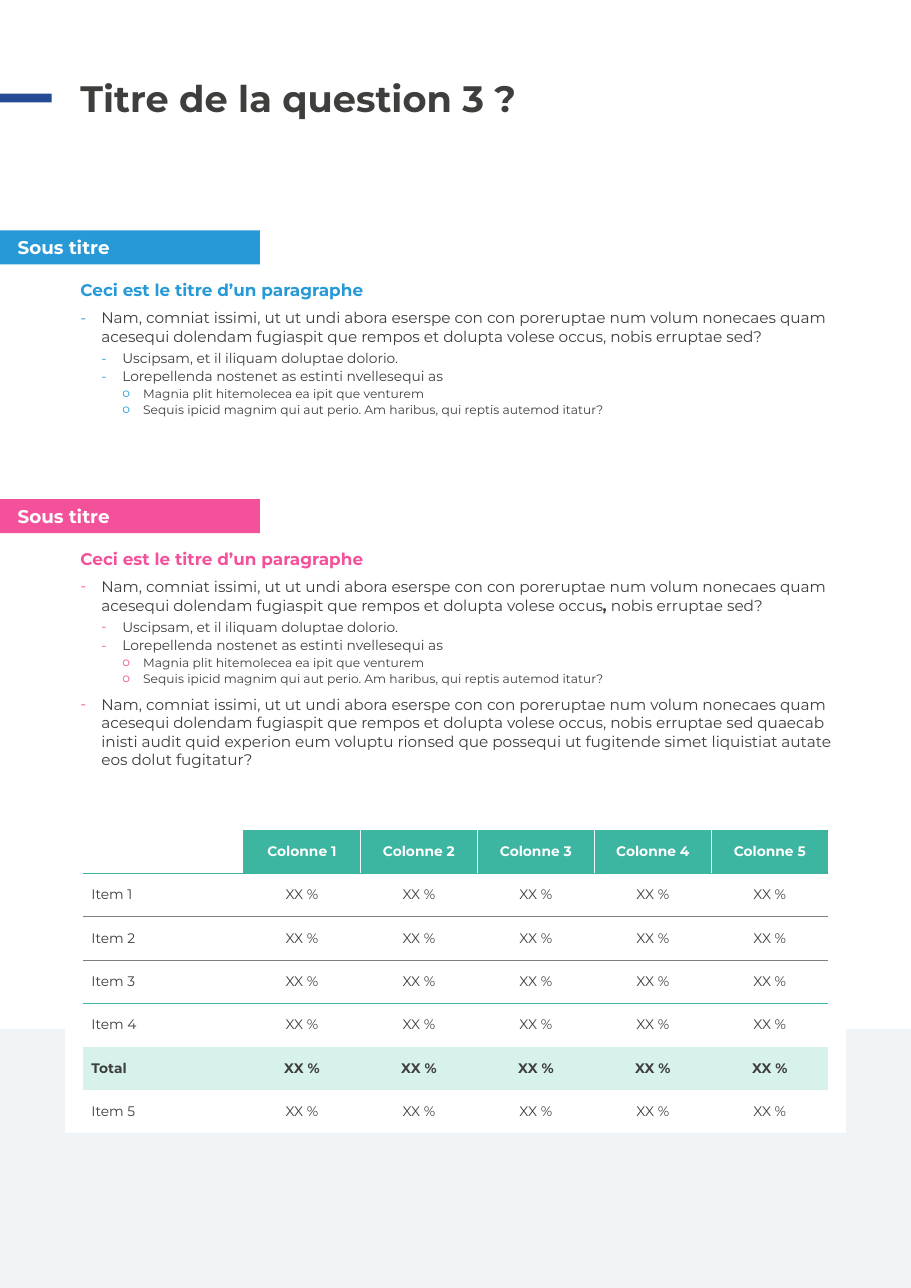
from lxml.etree import SubElement
from pptx import Presentation
from pptx.dml.color import RGBColor
from pptx.enum.shapes import MSO_SHAPE as Preset
from pptx.enum.text import MSO_ANCHOR as Anchor, PP_ALIGN as Align
from pptx.oxml.ns import qn
from pptx.util import Inches, Pt

FONT = "Montserrat"
WIDTH, HEIGHT = 8.27, 11.69
MARGIN, TEXT_WIDTH = 0.73, 6.81
INDENT = 0.19
NAVY, BLUE, PINK, TEAL = "254A96", "2699D6", "F4519B", "3CB5A1"
MINT, PALE, WHITE, DARK, GREY = "D7F2ED", "F1F4F6", "FFFFFF", "3E3E3C", "7F7F7F"
NO_GRID_STYLE = "{2D5ABB26-0587-4C30-8999-92F81FD0307C}"

# Bullet and font size for each outline level
LEVELS = {1: ("-", 10), 2: ("-", 9), 3: ("o", 8)}

OPENING = ("Nam, comniat issimi, ut ut undi abora eserspe con con poreruptae num volum "
           "nonecaes quam acesequi dolendam fugiaspit que rempos et dolupta volese occus")
DETAILS = [
    (2, 1, ["Uscipsam, et il iliquam doluptae dolorio."]),
    (2, 1, ["Lorepellenda nostenet as estinti nvellesequi as"]),
    (3, 1, ["Magnia plit hitemolecea ea ipit que venturem"]),
    (3, 6, ["Sequis ipicid magnim qui aut perio. Am haribus, qui reptis autemod itatur?"]),
]
# Each entry: level, space after, runs (a bare ", " run is bold)
BLUE_OUTLINE = [(1, 3, [OPENING + ", nobis erruptae sed?"])] + DETAILS
PINK_OUTLINE = [(1, 3, [OPENING, ", ", "nobis erruptae sed?"])] + DETAILS + [
    (1, 6, [OPENING + ", nobis erruptae sed quaecab inisti audit quid experion eum voluptu "
            "rionsed que possequi ut fugitende simet liquistiat autate eos dolut fugitatur?"]),
]


def colour(code):
    return RGBColor.from_string(code)


def add_run(paragraph, text, size, code, bold=False):
    run = paragraph.add_run()
    run.text = text
    run.font.name, run.font.size, run.font.bold = FONT, Pt(size), bold
    run.font.color.rgb = colour(code)


def set_frame(frame, anchor=Anchor.TOP, left=0):
    frame.word_wrap = True
    frame.vertical_anchor = anchor
    frame.margin_left = Inches(left)
    frame.margin_top = frame.margin_right = frame.margin_bottom = 0


def add_panel(slide, box, code):
    shape = slide.shapes.add_shape(Preset.RECTANGLE, *map(Inches, box))
    shape.shadow.inherit = False
    shape.fill.solid()
    shape.fill.fore_color.rgb = colour(code)
    shape.line.fill.background()
    return shape


def add_text_frame(slide, box, anchor=Anchor.TOP):
    frame = slide.shapes.add_textbox(*map(Inches, box)).text_frame
    set_frame(frame, anchor)
    return frame


def add_bullet(paragraph, level, code):
    properties = paragraph._p.get_or_add_pPr()
    properties.set("marL", str(Inches(INDENT * level)))
    properties.set("indent", str(-Inches(INDENT)))
    bullet_colour = SubElement(properties, qn("a:buClr"))
    SubElement(bullet_colour, qn("a:srgbClr"), val=code)
    SubElement(properties, qn("a:buFont"), typeface=FONT)
    SubElement(properties, qn("a:buChar"), char=LEVELS[level][0])


def add_heading(slide, box):
    left, top, width, height = box
    add_panel(slide, (0, top + 0.37, 0.47, 0.08), NAVY)
    frame = add_text_frame(slide, box, Anchor.MIDDLE)
    add_run(frame.paragraphs[0], "Titre de la question 3 ?", 24, DARK, True)


def add_section(slide, box, code, outline):
    left, top, width, height = box
    # Subtitle band, flush with the page edge
    band = add_panel(slide, (0, top, 2.36, 0.31), code).text_frame
    set_frame(band, Anchor.MIDDLE, 0.16)
    band.paragraphs[0].alignment = Align.LEFT
    add_run(band.paragraphs[0], "Sous titre", 12, WHITE, True)
    # Paragraph title
    title = add_text_frame(slide, (left, top + 0.45, width, 0.19))
    add_run(title.paragraphs[0], "Ceci est le titre d’un paragraphe", 11, code, True)
    # Bulleted outline
    body = add_text_frame(slide, (left, top + 0.71, width, height - 0.71))
    for index, (level, after, runs) in enumerate(outline):
        paragraph = body.add_paragraph() if index else body.paragraphs[0]
        paragraph.space_after = Pt(after)
        add_bullet(paragraph, level, code)
        for text in runs:
            add_run(paragraph, text, LEVELS[level][1], DARK, text == ", ")


def set_borders(cell, borders):
    properties = cell._tc.get_or_add_tcPr()
    for side in "LRTB":
        line = SubElement(properties, qn("a:ln" + side), w=str(Pt(0.5)))
        if side in borders:
            fill = SubElement(line, qn("a:solidFill"))
            SubElement(fill, qn("a:srgbClr"), val=borders[side])
        else:
            SubElement(line, qn("a:noFill"))


def add_results_table(slide, box):
    left, top, width, height = box
    labels = ["Item 1", "Item 2", "Item 3", "Item 4", "Total", "Item 5"]
    rows = [[""] + [f"Colonne {number}" for number in range(1, 6)]]
    rows += [[label] + ["XX %"] * 5 for label in labels]
    rules = [TEAL, GREY, GREY, TEAL]  # lines below the first rows

    frame = slide.shapes.add_table(len(rows), len(rows[0]), *map(Inches, box))
    table = frame.table
    table._tbl.tblPr.find(qn("a:tableStyleId")).text = NO_GRID_STYLE
    table.first_row = table.horz_banding = False
    label_width = 1.46
    for index, column in enumerate(table.columns):
        column.width = Inches((width - label_width) / 5 if index else label_width)

    for r, values in enumerate(rows):
        for c, text in enumerate(values):
            cell = table.cell(r, c)
            header, total = r == 0 and c > 0, values[0] == "Total"
            borders = {}
            if r < len(rules):
                borders["B"] = rules[r]
            if 0 < r <= len(rules):
                borders["T"] = rules[r - 1]
            if header and c > 1:
                borders["L"] = PALE
            if header and c < 5:
                borders["R"] = PALE
            set_borders(cell, borders)
            if header or total:
                cell.fill.solid()
                cell.fill.fore_color.rgb = colour(TEAL if header else MINT)
            else:
                cell.fill.background()
            cell.vertical_anchor = Anchor.MIDDLE
            cell.margin_left = Inches(0 if c else 0.08)
            cell.margin_top = cell.margin_right = cell.margin_bottom = 0
            paragraph = cell.text_frame.paragraphs[0]
            paragraph.alignment = Align.CENTER if c else Align.LEFT
            if text:
                add_run(paragraph, text, 9, WHITE if header else DARK, header or total)


def main():
    presentation = Presentation()
    presentation.slide_width, presentation.slide_height = Inches(WIDTH), Inches(HEIGHT)
    slide = presentation.slides.add_slide(presentation.slide_layouts[6])

    # Page foot
    add_panel(slide, (0, 9.34, WIDTH, HEIGHT - 9.34), PALE)

    # Title and the two text sections
    add_heading(slide, (MARGIN, 0.48, TEXT_WIDTH, 0.81))
    add_section(slide, (MARGIN, 2.09, TEXT_WIDTH, 2.59), BLUE, BLUE_OUTLINE)
    add_section(slide, (MARGIN, 4.53, TEXT_WIDTH, 2.59), PINK, PINK_OUTLINE)

    # Table on its white card
    add_panel(slide, (0.59, 9.3, 7.09, 0.98), WHITE)
    add_results_table(slide, (0.75, 7.53, 6.77, 2.76))

    presentation.save("out.pptx")


if __name__ == "__main__":
    main()
